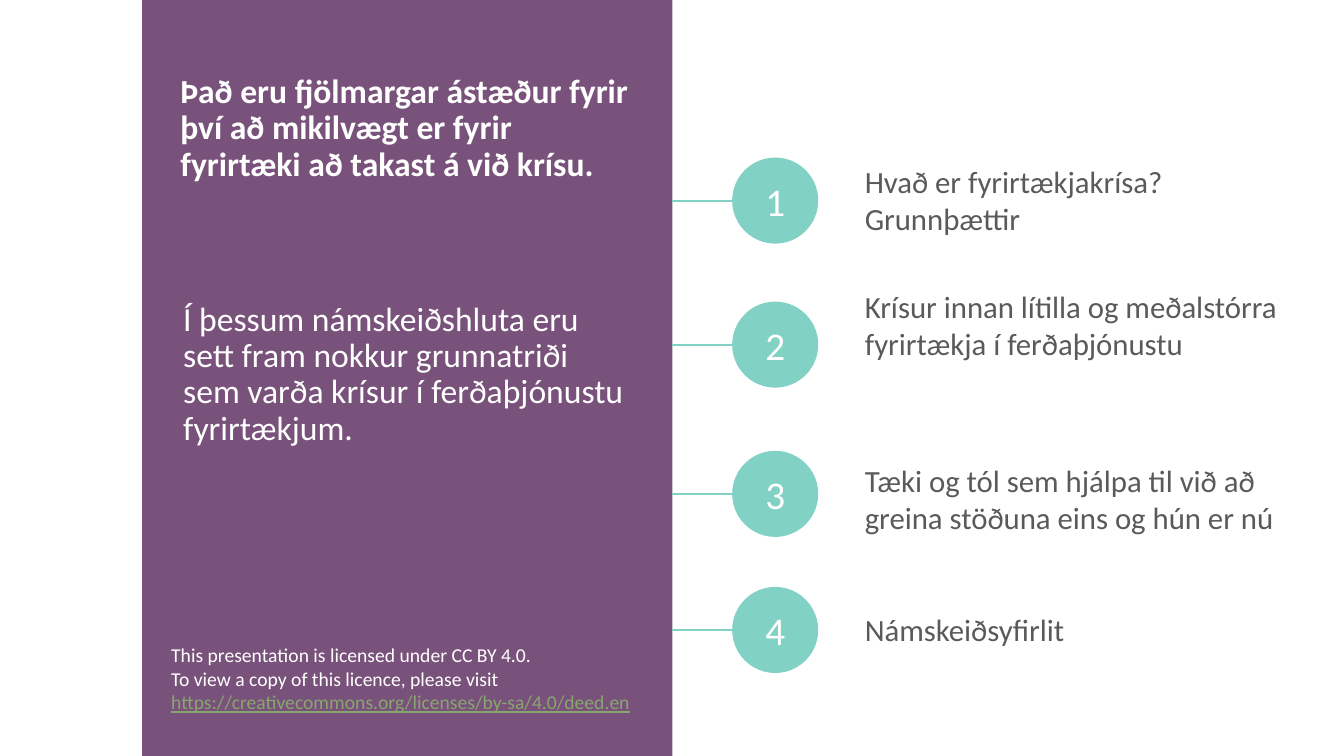
from lxml import etree
from pptx import Presentation
from pptx import util as u
from pptx.dml import color
from pptx.enum import shapes, text
from pptx.oxml import ns

PURPLE, TEAL, GREY, WHITE, GREEN = "79527B", "81D1C5", "595A59", "FFFFFF", "87A66E"
PANEL_LEFT, PANEL_RIGHT = 101.5, 480.25
CIRCLE_LEFT, CIRCLE_SIZE = 523.5, 60.5
LABEL_LEFT, LABEL_WIDTH = 610.6, 313.2

INTRO = "Það eru fjölmargar ástæður fyrir því að mikilvægt er fyrir fyrirtæki að takast á við krísu."
SUMMARY = ("Í þessum námskeiðshluta eru sett fram nokkur grunnatriði sem varða "
           "krísur í ferðaþjónustu fyrirtækjum.")
LICENCE = ["This presentation is licensed under CC BY 4.0.",
           "To view a copy of this licence, please visit "]
LICENCE_URL = "https://creativecommons.org/licenses/by-sa/4.0/deed.en"

# Circle centre, label top, label height, label paragraphs
STEPS = [
    (143.3, 113, 60.6, ["Hvað er fyrirtækjakrísa?", "Grunnþættir"]),
    (246.2, 202.3, 60.6, ["Krísur innan lítilla og meðalstórra fyrirtækja í ferðaþjónustu"]),
    (352.8, 326.3, 60.6, ["Tæki og tól sem hjálpa til við að greina stöðuna eins og hún er nú"]),
    (450, 432.9, 33.9, ["Námskeiðsyfirlit"]),
]


def rgb(value):
    return color.RGBColor.from_string(value)


def add_span(para, words, colour, **formats):
    span = para.add_run()
    span.text = words
    span.font.color.rgb = rgb(colour)
    for name, value in {"name": "Calibri", **formats}.items():
        setattr(span.font, name, value)


def add_text(page, place, lines, size, colour, spacing=1.0, bold=False):
    """Add a wrapping text box with one paragraph per line; return its last paragraph."""
    frame = page.shapes.add_textbox(*map(u.Pt, place)).text_frame
    frame.word_wrap = True
    for index, line in enumerate(lines):
        para = frame.add_paragraph() if index else frame.paragraphs[0]
        para.line_spacing = spacing
        add_span(para, line, colour, size=u.Pt(size), bold=bold)
    return para


def add_filled(page, kind, place, colour):
    shape = page.shapes.add_shape(kind, *map(u.Pt, place))
    shape.shadow.inherit = False
    shape.fill.solid()
    shape.fill.fore_color.rgb = rgb(colour)
    shape.line.color.rgb = rgb(colour)
    shape.line.width = u.Pt(1)
    return shape


def add_link_line(page, y):
    """Join the panel to a circle at height y."""
    line = page.shapes.add_connector(
        shapes.MSO_CONNECTOR.STRAIGHT, *map(u.Pt, (PANEL_RIGHT, y, CIRCLE_LEFT, y)))
    line.line.color.rgb = rgb(TEAL)
    line.line.width = u.Pt(1.5)
    etree.SubElement(line._element.spPr, ns.qn("a:effectLst"))


def add_step(page, number, centre, top, height, lines):
    place = (CIRCLE_LEFT, centre - CIRCLE_SIZE / 2, CIRCLE_SIZE, CIRCLE_SIZE)
    circle = add_filled(page, shapes.MSO_SHAPE.OVAL, place, TEAL)
    frame = circle.text_frame
    for side in ("left", "top", "right", "bottom"):
        setattr(frame, f"margin_{side}", 0)
    frame.vertical_anchor = text.MSO_ANCHOR.MIDDLE
    para = frame.paragraphs[0]
    para.alignment = text.PP_ALIGN.CENTER
    add_span(para, str(number), WHITE, size=u.Pt(28))
    add_link_line(page, centre)
    add_text(page, (LABEL_LEFT, top, LABEL_WIDTH, height), lines, 22, GREY)


def main():
    deck = Presentation()
    deck.slide_width, deck.slide_height = u.Pt(960), u.Pt(540)
    page = deck.slides.add_slide(deck.slide_layouts[6])

    panel = add_filled(page, shapes.MSO_SHAPE.RECTANGLE,
                       (PANEL_LEFT, 0, PANEL_RIGHT - PANEL_LEFT, 540), PURPLE)
    panel.line.fill.background()
    add_text(page, (123.8, 212.4, 329, 295.2), [SUMMARY], 24, WHITE, spacing=0.9)
    add_text(page, (121.7, 49.7, 334.8, 90), [INTRO], 24, WHITE, spacing=0.9, bold=True)
    for number, step in enumerate(STEPS, 1):
        add_step(page, number, *step)
    last = add_text(page, (115.2, 455.8, 366.5, 58.3), LICENCE, 14, WHITE)
    add_span(last, LICENCE_URL, GREEN, size=u.Pt(14), underline=True)

    deck.save("out.pptx")


if __name__ == "__main__":
    main()
